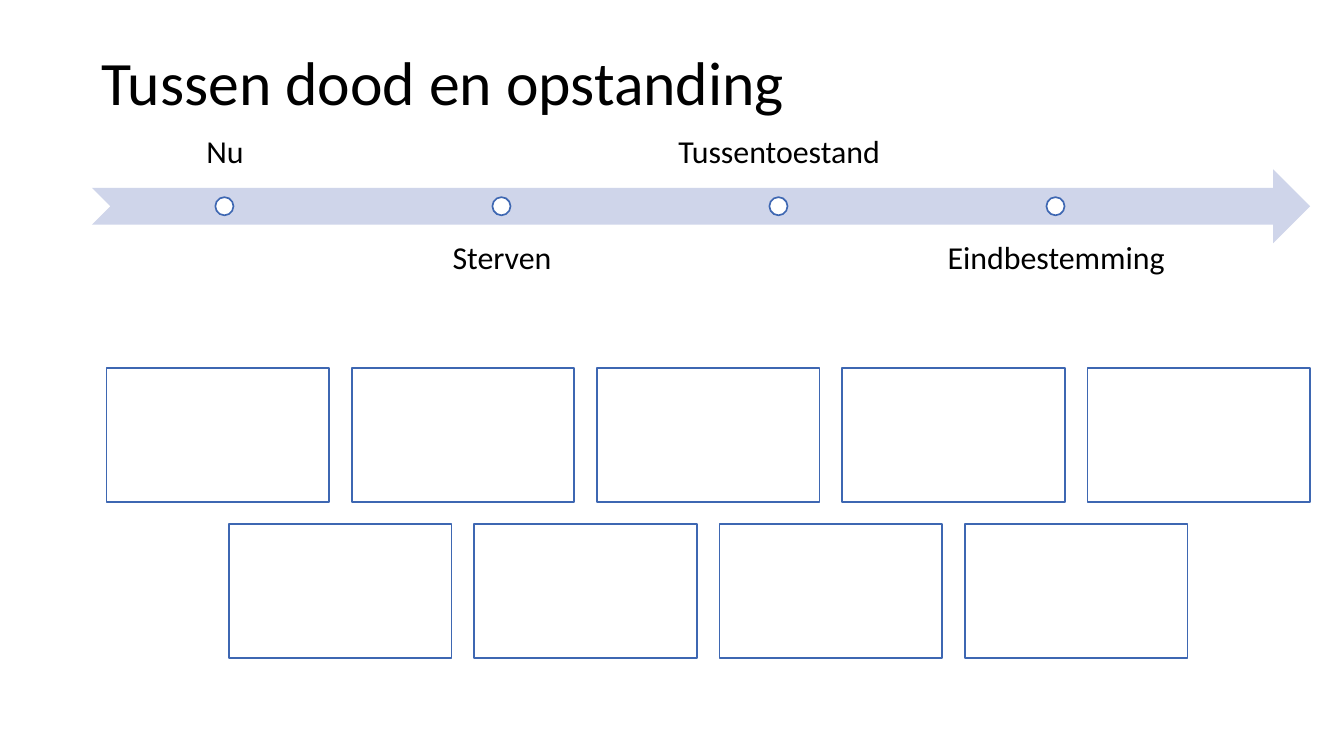
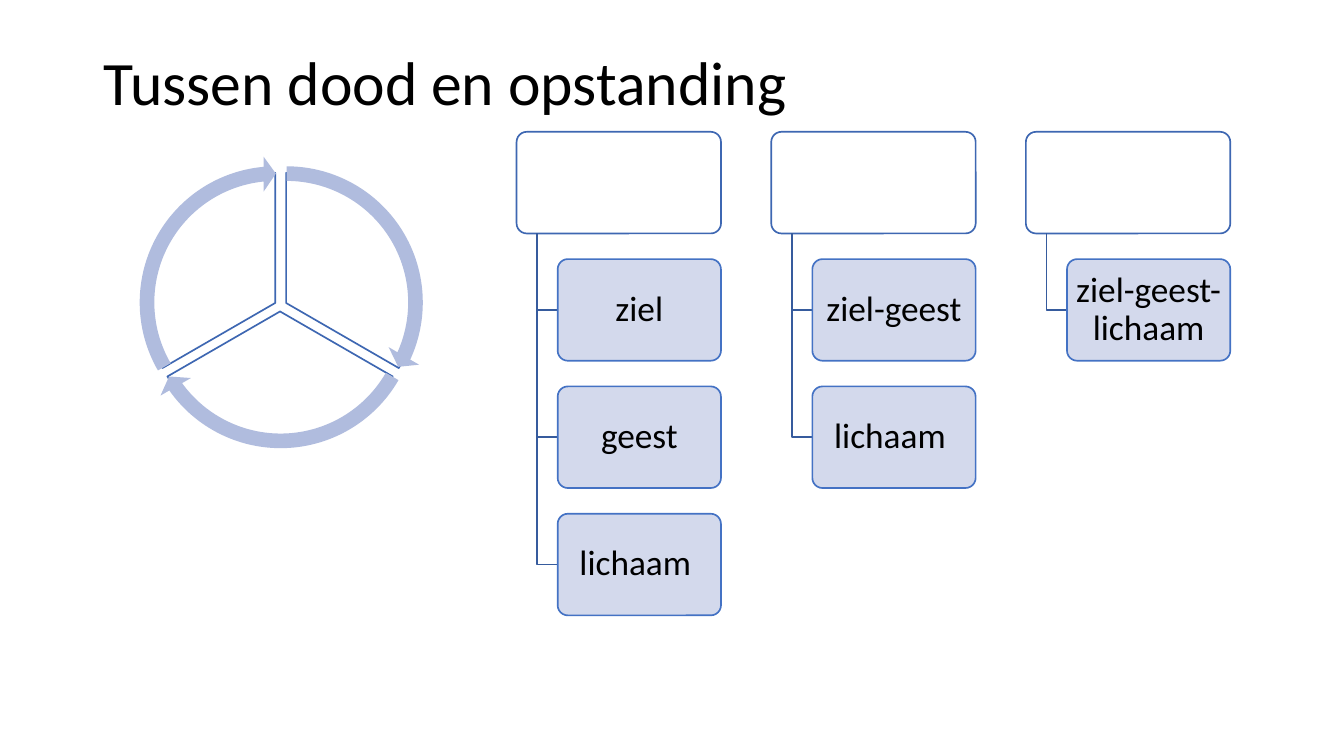
"""Build two slides on the state between death and resurrection: a timeline and a body-soul-spirit scheme."""
from lxml.etree import SubElement
from pptx import Presentation
from pptx.dml.color import RGBColor
from pptx.enum.shapes import MSO_SHAPE as Preset
from pptx.enum.text import MSO_ANCHOR as Anchor, PP_ALIGN as Align
from pptx.oxml.ns import qn
from pptx.util import Inches, Pt

OUTLINE, CHILD_OUTLINE, BRANCH = "3E67B2", "4472C4", "365B9D"
WHITE, BLACK, PALE, ARROW = "FFFFFF", "000000", "CFD5EA", "B0BCDE"


def paint(shape, fill=None, line=None, alpha=None, adjustments=()):
    shape.shadow.inherit = False
    for index, value in enumerate(adjustments):
        shape.adjustments[index] = value
    if fill:
        shape.fill.solid()
        shape.fill.fore_color.rgb = RGBColor.from_string(fill)
        if alpha:
            color = shape.fill._xPr.find(qn("a:solidFill"))[0]
            SubElement(color, qn("a:alpha")).set("val", str(alpha * 1000))
    else:
        shape.fill.background()
    if line:
        shape.line.color.rgb = RGBColor.from_string(line)
        shape.line.width = Pt(1)
    else:
        shape.line.fill.background()
    return shape


def write(shape, text, size, insets, align=Align.CENTER, anchor=Anchor.MIDDLE):
    side, end = map(Inches, insets)
    frame = shape.text_frame
    frame.text = text
    paragraph = frame.paragraphs[0]
    font = paragraph.runs[0].font
    font.color.rgb = RGBColor.from_string(BLACK)
    formats = (
        (frame, {"word_wrap": True, "vertical_anchor": anchor, "margin_left": side,
                 "margin_right": side, "margin_top": end, "margin_bottom": end}),
        (paragraph, {"alignment": align, "line_spacing": 0.9}),
        (font, {"name": "Calibri", "size": Pt(size)}),
    )
    for target, values in formats:
        for name, value in values.items():
            setattr(target, name, value)


presentation = Presentation()
presentation.slide_width = Inches(11.11)
presentation.slide_height = Inches(6.25)

slides = []
for title_insets in ((0.08, 0.04), (0.1, 0.05)):
    slide = presentation.slides.add_slide(presentation.slide_layouts[6])
    title = slide.shapes.add_textbox(Inches(0.76), Inches(0.33), Inches(9.58), Inches(0.75))
    write(title, "Tussen dood en opstanding", 36.7, title_insets, Align.LEFT)
    slides.append(slide)
timeline, scheme = (slide.shapes for slide in slides)

paint(timeline.add_shape(Preset.NOTCHED_RIGHT_ARROW, Inches(0.76), Inches(1.4),
                         Inches(10.07), Inches(0.61)), PALE)
for index, stage in enumerate(("Nu", "Sterven", "Tussentoestand", "Eindbestemming")):
    left = 0.77 + 2.29 * index
    top, anchor = ((0.94, Anchor.BOTTOM), (1.86, Anchor.TOP))[index % 2]
    label = timeline.add_textbox(Inches(left), Inches(top), Inches(2.18), Inches(0.61))
    write(label, stage, 19, (0.15, 0.15), anchor=anchor)
    paint(timeline.add_shape(Preset.OVAL, Inches(left + 1.01), Inches(1.63),
                             Inches(0.15), Inches(0.15)), WHITE, OUTLINE)

box_step = (8.99 - 0.88) / 4
for row, count in enumerate((5, 4)):
    for column in range(count):
        left = 0.88 + box_step * (column + row / 2)
        paint(timeline.add_shape(Preset.RECTANGLE, Inches(left), Inches(3.04 + 1.29 * row),
                                 Inches(1.84), Inches(1.11)), WHITE, OUTLINE)

sectors = ((1.29, 1.43, 162, 18), (1.24, 1.5, 18, 90), (1.2, 1.43, 90, 162))
for left, top, start, end in sectors:
    paint(scheme.add_shape(Preset.PIE, Inches(left), Inches(top), Inches(2.15), Inches(2.15)),
          WHITE, OUTLINE, adjustments=(start, end))
arrows = ((1.16, 1.29, 14.73, 161.99), (1.11, 1.37, 86.72, 18), (1.07, 1.29, 158.73, 90))
for left, top, end, start in arrows:
    paint(scheme.add_shape(Preset.CIRCULAR_ARROW, Inches(left), Inches(top),
                           Inches(2.42), Inches(2.42)),
          ARROW, adjustments=(0.05, 3.28, end, start, 0.06))

parent_top, parent_width, child_width, height = 1.09, 1.69, 1.35, 0.84
column_step = (8.48 - 4.27) / 2
row_step = column_step / 2
trees = (("ziel", "geest", "lichaam "), ("ziel-geest", "lichaam "), ("ziel-geest-lichaam",))
for column, children in enumerate(trees):
    left = 4.27 + column_step * column
    child_left = left + parent_width - child_width
    trunk = left + 0.17
    paint(scheme.add_shape(Preset.ROUNDED_RECTANGLE, Inches(left), Inches(parent_top),
                           Inches(parent_width), Inches(height)),
          WHITE, OUTLINE, adjustments=(0.1,))
    for row, text in enumerate(children, 1):
        top = parent_top + row_step * row
        middle = Inches(top + height / 2)
        builder = scheme.build_freeform(Inches(trunk), Inches(parent_top + height))
        builder.add_line_segments(((Inches(trunk), middle), (Inches(child_left), middle)),
                                  close=False)
        paint(builder.convert_to_shape(), line=BRANCH)
        child = scheme.add_shape(Preset.ROUNDED_RECTANGLE, Inches(child_left), Inches(top),
                                 Inches(child_width), Inches(height))
        paint(child, PALE, CHILD_OUTLINE, alpha=90, adjustments=(0.1,))
        write(child, text, 21, (0.04, 0.03))

presentation.save("out.pptx")
